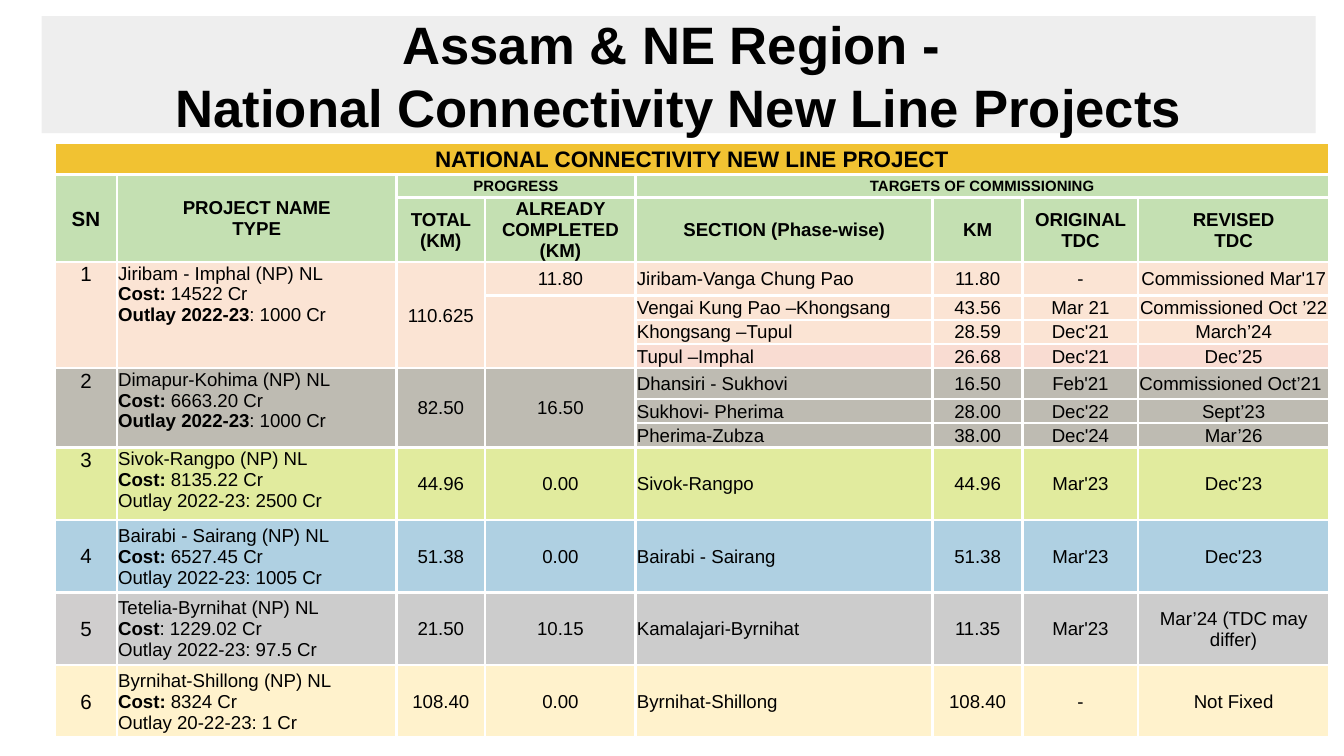
from lxml.etree import SubElement as Sub
from pptx import Presentation as Deck
from pptx.dml.color import RGBColor as Color
from pptx.enum.text import MSO_ANCHOR as Anchor, PP_ALIGN as Align
from pptx.oxml.ns import qn
from pptx.util import Inches, Pt

BLACK = Color(0x00, 0x00, 0x00)
PALE = Color(0xEE, 0xEE, 0xEE)
GOLD = Color(0xF1, 0xC2, 0x32)
GREEN = Color(0xC4, 0xE0, 0xB2)
PEACH = Color(0xFB, 0xE4, 0xD4)
ROSE = Color(0xF9, 0xDC, 0xD2)
STONE = Color(0xBE, 0xBB, 0xB2)
LIME = Color(0xE1, 0xEB, 0x9E)
BLUE = Color(0xAF, 0xD0, 0xE2)
GREY = Color(0xCC, 0xCC, 0xCC)
SILVER = Color(0xD0, 0xCE, 0xCE)
CREAM = Color(0xFF, 0xF2, 0xCC)

WIDTHS = [0.46, 2.08, 0.66, 1.12, 2.21, 0.67, 0.86, 1.42]
HEIGHTS = [0.24, 0.17, 0.48, 0.25] + [0.18] * 3 + [0.23] + [0.18] * 2 + [0.54] * 4

HEADS = [
    (0, 0, 0, 7, "NATIONAL CONNECTIVITY NEW LINE PROJECT", 12, GOLD),
    (1, 0, 2, 0, "SN", 11, GREEN),
    (1, 1, 2, 1, "PROJECT NAME\vTYPE", 10, GREEN),
    (1, 2, 1, 3, "PROGRESS", 8, GREEN),
    (1, 4, 1, 7, "TARGETS OF COMMISSIONING", 8, GREEN),
]
LABELS = ["TOTAL (KM)", "ALREADY COMPLETED (KM)", "SECTION (Phase-wise)",
          "KM", "ORIGINAL TDC", "REVISED\vTDC"]

PROJECTS = [
    (PEACH, "Jiribam - Imphal (NP) NL\n*Cost:* 14522 Cr\n*Outlay 2022-23*: 1000 Cr",
     "110.625", "11.80", [
         ("Jiribam-Vanga Chung Pao", "11.80", "-", "Commissioned Mar'17"),
         ("Vengai Kung Pao –Khongsang", "43.56", "Mar 21", "Commissioned Oct ’22"),
         ("Khongsang –Tupul", "28.59", "Dec'21", "March’24"),
         ("Tupul –Imphal", "26.68", "Dec'21", "Dec’25")]),
    (STONE, "Dimapur-Kohima (NP) NL\n*Cost:* 6663.20 Cr\n*Outlay 2022-23*: 1000 Cr",
     "82.50", "16.50", [
         ("Dhansiri - Sukhovi", "16.50", "Feb'21", "Commissioned Oct’21"),
         ("Sukhovi- Pherima", "28.00", "Dec'22", "Sept’23"),
         ("Pherima-Zubza", "38.00", "Dec'24", "Mar’26")]),
    (LIME, "Sivok-Rangpo (NP) NL\n*Cost:* 8135.22 Cr\nOutlay 2022-23: 2500 Cr",
     "44.96", "0.00", [("Sivok-Rangpo", "44.96", "Mar'23", "Dec'23")]),
    (BLUE, "Bairabi - Sairang (NP) NL\n*Cost: *6527.45 Cr\nOutlay 2022-23: 1005 Cr",
     "51.38", "0.00", [("Bairabi - Sairang", "51.38", "Mar'23", "Dec'23")]),
    (GREY, "Tetelia-Byrnihat (NP) NL\n*Cost*: 1229.02 Cr\nOutlay 2022-23: 97.5 Cr",
     "21.50", "10.15", [("Kamalajari-Byrnihat", "11.35", "Mar'23", "Mar’24 (TDC may differ)")]),
    (CREAM, "Byrnihat-Shillong (NP) NL\n*Cost:* 8324 Cr\nOutlay 20-22-23: 1 Cr",
     "108.40", "0.00", [("Byrnihat-Shillong", "108.40", "-", "Not Fixed")]),
]


def apply(item, form):
    for name, value in form.items():
        setattr(item, name, value)


def write(frame, text, size, bold=False, align=Align.CENTER):
    for row, line in enumerate(text.split("\n")):
        para = frame.add_paragraph() if row else frame.paragraphs[0]
        para.alignment = align
        for turn, part in enumerate(line.split("*")):
            for step, bit in enumerate(part.split("\v")):
                if step:
                    para.add_line_break()
                    Sub(para._p[-1], qn("a:rPr"), sz=str(size * 100))
                if bit:
                    run = para.add_run()
                    run.text = bit
                    apply(run.font, {"name": "Arial", "size": Pt(size),
                                     "bold": bold or turn % 2 == 1})
                    run.font.color.rgb = BLACK


def dress(cell):
    apply(cell, {"margin_left": Inches(0.01), "margin_right": Inches(0.01),
                 "margin_top": Inches(0.01), "margin_bottom": 0,
                 "vertical_anchor": Anchor.MIDDLE})
    props = cell._tc.get_or_add_tcPr()
    for side in ("a:lnL", "a:lnR", "a:lnT", "a:lnB"):
        line = Sub(props, qn(side), w=str(Pt(1.5)))
        Sub(Sub(line, qn("a:solidFill")), qn("a:srgbClr"), val="FFFFFF")


def paint(cell, color):
    cell.fill.solid()
    cell.fill.fore_color.rgb = color


def add_title(slide, left, top, width, height):
    title = slide.shapes.title
    apply(title, {"left": Inches(left), "top": Inches(top),
                  "width": Inches(width), "height": Inches(height)})
    paint(title, PALE)
    frame = title.text_frame
    apply(frame, {"vertical_anchor": Anchor.MIDDLE, "word_wrap": True,
                  "margin_left": Inches(0.07), "margin_right": Inches(0.07),
                  "margin_top": Inches(0.04), "margin_bottom": Inches(0.04)})
    write(frame, "Assam & NE Region - \nNational Connectivity New Line Projects", 28.2, True)


def add_grid(slide, left, top):
    grid = slide.shapes.add_table(len(HEIGHTS), len(WIDTHS), Inches(left), Inches(top),
                                  Inches(sum(WIDTHS)), Inches(sum(HEIGHTS))).table
    apply(grid, {"first_row": False, "horz_banding": False})
    for col, width in zip(grid.columns, WIDTHS):
        col.width = Inches(width)
    for row, height in zip(grid.rows, HEIGHTS):
        row.height = Inches(height)
    for cell in grid.iter_cells():
        dress(cell)

    def put(row, col, text, color, size=10, end=None, **form):
        cell = grid.cell(row, col)
        last = end or (row, col)
        if last != (row, col):
            cell.merge(grid.cell(*last))
        for down in range(row, last[0] + 1):
            for over in range(col, last[1] + 1):
                paint(grid.cell(down, over), color)
        if text:
            write(cell.text_frame, text, size, **form)
        return cell

    for row, col, down, over, text, size, color in HEADS:
        put(row, col, text, color, size, (down, over), bold=True)
    for col, text in enumerate(LABELS, 2):
        put(2, col, text, GREEN, bold=True)

    row = 3
    for rank, (color, name, total, done, parts) in enumerate(PROJECTS, 1):
        last = row + len(parts) - 1
        mark = put(row, 0, str(rank), SILVER if rank == 5 else color, 11, (last, 0))
        label = put(row, 1, name, color, end=(last, 1), align=Align.LEFT)
        if rank <= 3:
            mark.vertical_anchor = label.vertical_anchor = Anchor.TOP
        put(row, 2, total, color, end=(last, 2))
        split = rank == 1
        put(row, 3, done, color, end=(row if split else last, 3))
        if split:
            put(row + 1, 3, "", color, end=(last, 3))
        for line, part in enumerate(parts, row):
            tint = ROSE if part[0] == "Tupul –Imphal" else color
            for col, text in enumerate(part, 4):
                flush = col == 4 or text == "Commissioned Oct’21"
                put(line, col, text, tint, align=Align.LEFT if flush else Align.CENTER)
        row = last + 1

    for cell in grid.iter_cells():
        if not cell.text_frame.text:
            Sub(cell.text_frame.paragraphs[0]._p, qn("a:endParaRPr"), sz="800")


def main():
    deck = Deck()
    wide = Inches(10)
    apply(deck, {"slide_width": wide, "slide_height": wide * 9 // 16})
    slide = deck.slides.add_slide(deck.slide_layouts[5])
    add_title(slide, 0.31, 0.12, 9.48, 0.87)
    add_grid(slide, 0.41, 1.06)
    deck.save("out.pptx")


if __name__ == "__main__":
    main()
